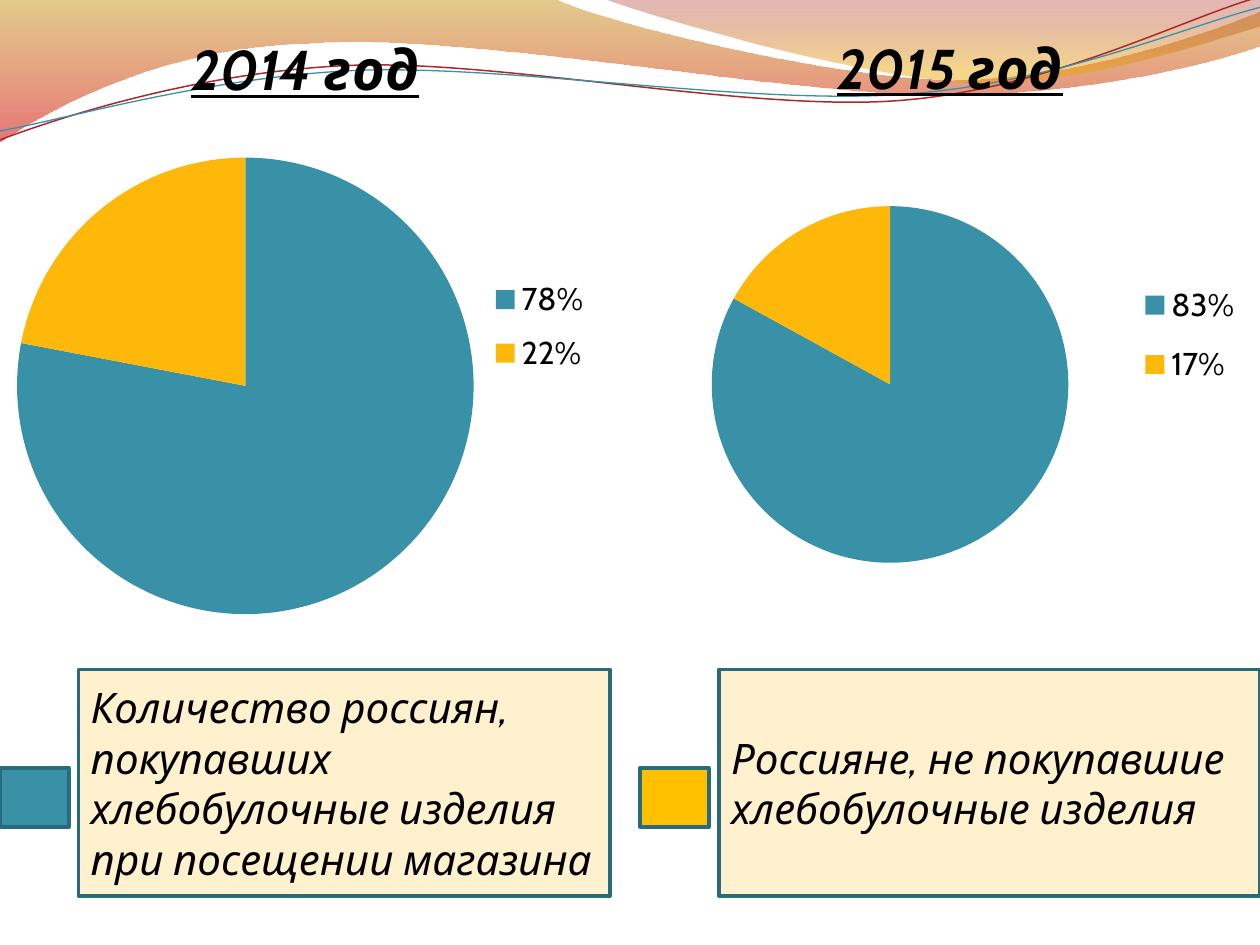
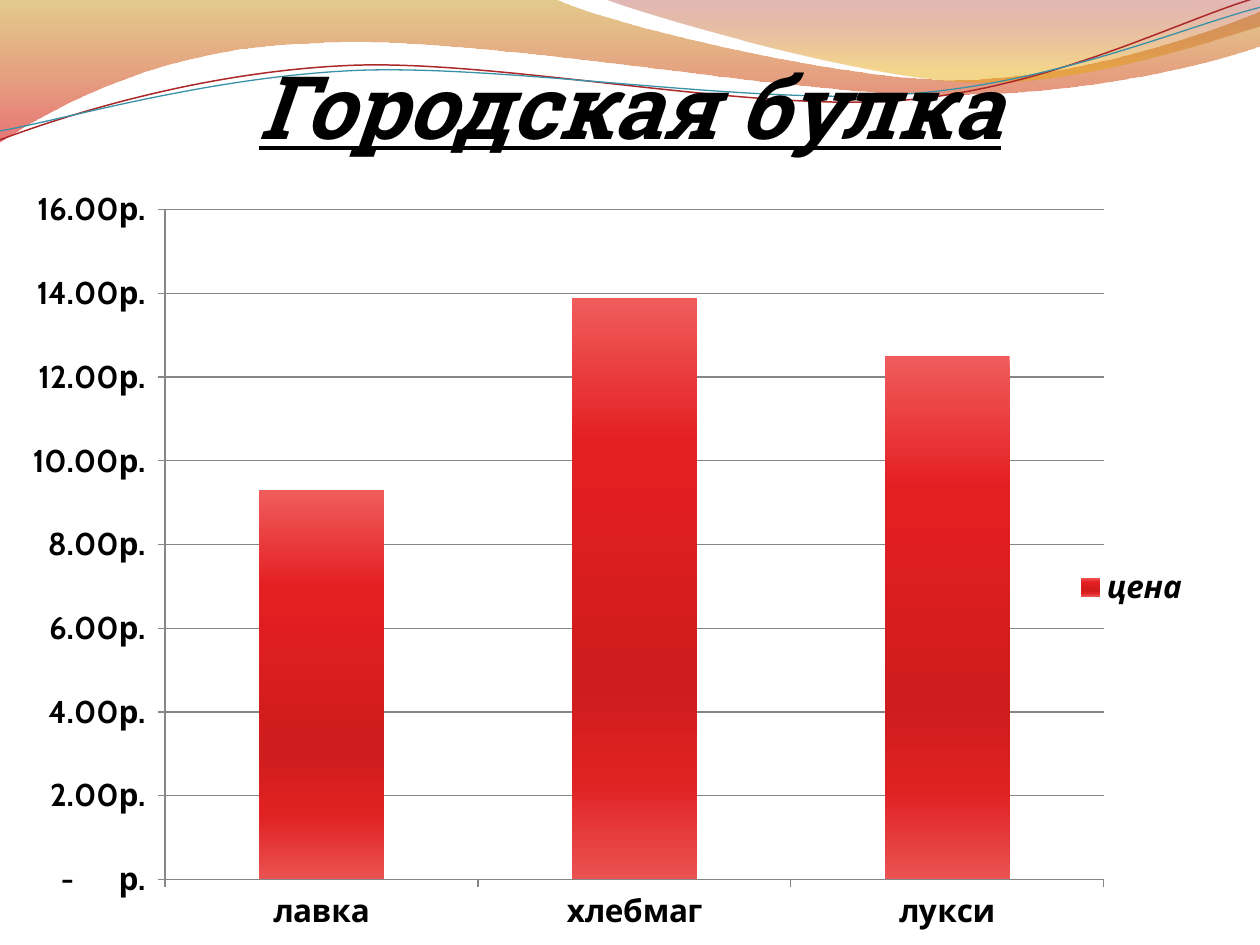
from lxml import etree
from pptx import Presentation
from pptx.chart.data import CategoryChartData
from pptx.dml.color import RGBColor
from pptx.enum.chart import XL_CHART_TYPE, XL_LEGEND_POSITION, XL_TICK_MARK
from pptx.enum.shapes import MSO_SHAPE
from pptx.enum.text import MSO_ANCHOR, PP_ALIGN
from pptx.oxml import parse_xml
from pptx.oxml.ns import nsdecls, qn
from pptx.util import Cm, Pt

BODY_FONT, TITLE_FONT = "Cabin", "Roboto Slab"
BLACK, TEAL, AMBER, RED = "000000", "3891A7", "FEB80A", "AC2829"
SWATCH_AMBER, CREAM, BORDER, GRID = "FFC000", "FFF1CE", "296B7C", "868686"

# Outlines in cm: a start point, then segments of one point (line) or three (Bezier curve)
WIDE_BAND = [(0, 0), [(11.18, -0.03)],
             [(12.09, 0.43), (16.87, 1.6), (19.25, 1.6)],
             [(21.67, 1.6), (24.33, 0.66), (25.4, 0.23)], [(25.43, 0.91)],
             [(24.97, 1.12), (22.1, 1.93), (18.95, 1.91)],
             [(15.8, 1.91), (9.7, 0.71), (6.53, 0.86)],
             [(3.28, 0.91), (1.17, 2.11), (-0.03, 2.87)]]
RIGHT_BAND = [(12.17, -0.03),
              [(12.93, 0.28), (17.32, 1.57), (19.53, 1.65)],
              [(21.74, 1.75), (24.41, 0.81), (25.4, 0.53)], [(25.4, 0)]]
RED_WAVE = [(0, 2.82),
            [(1.22, 2.36), (4.01, 1.45), (7.04, 1.32)],
            [(10.03, 1.19), (15.06, 2.26), (18.11, 2.03)],
            [(21.16, 1.8), (23.83, 0.38), (25.35, -0.05)]]
TEAL_WAVE = [(0, 2.64),
             [(1.19, 2.44), (4.17, 1.55), (7.19, 1.42)],
             [(10.24, 1.3), (15.16, 2.13), (18.21, 1.9)],
             [(21.23, 1.7), (23.9, 0.53), (25.4, 0.15)]]

BAR_STOPS = [(0, "F05C5C"), (25, "E41F22"), (67, "CF1C1C"), (83, "E02122"), (100, "EB5252")]
PRICE_FORMAT = ('_-* #,##0.00[$р.-419]_-;\\-* #,##0.00[$р.-419]_-;'
                '_-* "-"??[$р.-419]_-;_-@_-')


def rgb(color):
    return RGBColor.from_string(color)


def style_font(font, size, name=BODY_FONT, bold=False, italic=False, underline=False):
    font.size, font.name = Pt(size), name
    font.bold, font.italic, font.underline = bold, italic, underline
    font.color.rgb = rgb(BLACK)


def add_outline(s, outline, closed):
    """Build a polygon through all points, then turn its three-point segments into curves."""
    start, *segments = outline
    builder = s.shapes.build_freeform(Cm(start[0]), Cm(start[1]))
    builder.add_line_segments([(Cm(x), Cm(y)) for segment in segments for x, y in segment],
                              close=closed)
    sp = builder.convert_to_shape()
    sp.shadow.inherit = False
    lines = iter(list(sp._element.spPr.iter(qn("a:lnTo"))))
    for segment in segments:
        group = [next(lines) for _ in segment]
        if len(group) == 3:
            curve = etree.Element(qn("a:cubicBezTo"))
            group[0].addprevious(curve)
            for line in group:
                curve.append(line[0])
                line.getparent().remove(line)
    return sp


def add_band(s, outline, stops):
    """Add a closed band; each stop is position, colour and opacity in percent."""
    sp = add_outline(s, outline, True)
    sp.line.fill.background()
    sp.fill.gradient()
    sp.fill.gradient_angle = 270
    for stop, (position, color, _) in zip(sp.fill.gradient_stops, stops):
        stop.position = position / 100
        stop.color.rgb = rgb(color)
    for clr, (_, _, opacity) in zip(sp._element.spPr.iter(qn("a:srgbClr")), stops):
        etree.SubElement(clr, qn("a:alpha"), val=str(opacity * 1000))
    return sp


def add_wave(s, outline, color, width):
    sp = add_outline(s, outline, False)
    sp.fill.background()
    sp.line.color.rgb = rgb(color)
    sp.line.width = Pt(width)
    return sp


def decorate_master(prs, s):
    """Draw the bands on a slide, then move them to the master behind everything."""
    shapes = [
        add_band(s, WIDE_BAND, [(0, "C38B00", 45), (100, "D60305", 55)]),
        add_band(s, RIGHT_BAND, [(0, "A11112", 30), (80, "E9A600", 45)]),
        add_wave(s, RED_WAVE, RED, 0.85),
        add_wave(s, TEAL_WAVE, TEAL, 0.75),
    ]
    tree = prs.slide_master.shapes._spTree
    for i, sp in enumerate(shapes):
        sp._element.nvSpPr.cNvPr.set("id", str(100 + i))
        tree.insert(2 + i, sp._element)


def place(element, index, x, y, w=None, h=None, inner=False):
    """Give a chart part a manual layout, in fractions of the chart."""
    old = element.find(qn("c:layout"))
    if old is not None:
        element.remove(old)
    layout = parse_xml(f'<c:layout {nsdecls("c")}><c:manualLayout/></c:layout>')
    values = [("layoutTarget", "inner")] if inner else []
    values += [("xMode", "edge"), ("yMode", "edge"), ("x", x), ("y", y)]
    if w is not None:
        values += [("w", w), ("h", h)]
    for tag, value in values:
        etree.SubElement(layout[0], qn(f"c:{tag}"), val=str(value))
    element.insert(index, layout)


def add_chart(s, kind, box, name, cats, vals, plot_area, legend_area):
    data = CategoryChartData()
    data.categories = cats
    data.add_series(name, vals)
    chart = s.shapes.add_chart(kind, *map(Cm, box), data).chart
    style_font(chart.font, 18)
    space = chart._chartSpace
    space.find(qn("c:txPr")).addprevious(
        parse_xml(f'<c:spPr {nsdecls("c", "a")}><a:noFill/><a:ln><a:noFill/></a:ln></c:spPr>'))
    place(space.chart.plotArea, 0, *plot_area, inner=True)
    chart.has_legend = True
    chart.legend.position = XL_LEGEND_POSITION.RIGHT
    chart.legend.include_in_layout = False
    place(chart.legend._element, 1, *legend_area)
    return chart


def add_year_pie(s, box, title, vals, title_at, plot_area, legend_area):
    chart = add_chart(s, XL_CHART_TYPE.PIE, box, title, [f"{v}%" for v in vals], vals,
                      plot_area, legend_area)
    chart.has_title = True
    r = chart.chart_title.text_frame.paragraphs[0].add_run()
    r.text = title
    style_font(r.font, 32, bold=True, italic=True, underline=True)
    place(chart.chart_title._element, 1, *title_at)
    plot = chart.plots[0]
    plot.vary_by_categories = True
    for i, color in enumerate((TEAL, AMBER)):
        fill = plot.series[0].points[i].format.fill
        fill.solid()
        fill.fore_color.rgb = rgb(color)


def add_price_columns(s, box, name, cats, vals):
    chart = add_chart(s, XL_CHART_TYPE.COLUMN_CLUSTERED, box, name, cats, vals,
                      (0.131, 0.045, 0.745, 0.87), (0.848, 0.5, 0.1, 0.07))
    chart.has_title = False
    style_font(chart.legend.font, 18, bold=True, italic=True)
    plot = chart.plots[0]
    plot.vary_by_categories = False
    plot.gap_width = 150
    stops = "".join(f'<a:gs pos="{pos * 1000}"><a:srgbClr val="{color}"/></a:gs>'
                    for pos, color in BAR_STOPS)
    plot.series[0].format.fill.gradient()
    grad = next(plot.series[0]._element.iter(qn("a:gradFill")))
    grad.getparent().replace(grad, parse_xml(
        f'<a:gradFill {nsdecls("a")}><a:gsLst>{stops}</a:gsLst><a:lin ang="5400000"/></a:gradFill>'))
    prices = chart.value_axis
    prices.minimum_scale, prices.maximum_scale, prices.major_unit = 0, 16, 2
    prices.tick_labels.number_format = PRICE_FORMAT
    prices.tick_labels.number_format_is_linked = False
    prices.has_major_gridlines = True
    prices.major_gridlines.format.line.color.rgb = rgb(GRID)
    for axis in (prices, chart.category_axis):
        style_font(axis.tick_labels.font, 18, bold=True)
        axis.major_tick_mark = XL_TICK_MARK.OUTSIDE
        axis.format.line.color.rgb = rgb(GRID)


def add_box(s, box, fill, text=None):
    sp = s.shapes.add_shape(MSO_SHAPE.RECTANGLE, *map(Cm, box))
    sp.shadow.inherit = False
    sp.fill.solid()
    sp.fill.fore_color.rgb = rgb(fill)
    sp.line.color.rgb = rgb(BORDER)
    sp.line.width = Pt(2)
    if text:
        tf = sp.text_frame
        tf.word_wrap = True
        tf.vertical_anchor = MSO_ANCHOR.MIDDLE
        p = tf.paragraphs[0]
        p.alignment = PP_ALIGN.LEFT
        r = p.add_run()
        r.text = text
        style_font(r.font, 24, italic=True)


def add_key(s, left, text_left, text_width, color, text):
    """Add a colour swatch with its explanation beside it."""
    add_box(s, (text_left, 13.5, text_width, 4.56), CREAM, text)
    add_box(s, (left, 15.48, 1.39, 1.19), color)


def set_title(s, text):
    sp = s.shapes.title
    sp.left, sp.top, sp.width, sp.height = Cm(0), Cm(0), Cm(25.4), Cm(3.17)
    tf = sp.text_frame
    tf.margin_left = tf.margin_right = tf.margin_bottom = 0
    tf.margin_top = Cm(0.13)
    tf.vertical_anchor = MSO_ANCHOR.BOTTOM
    p = tf.paragraphs[0]
    p.alignment = PP_ALIGN.CENTER
    r = p.add_run()
    r.text = text
    style_font(r.font, 50, TITLE_FONT, bold=True, italic=True, underline=True)


def main():
    prs = Presentation()
    prs.slide_width, prs.slide_height = Cm(25.4), Cm(19.05)
    title_only, blank = prs.slide_layouts[5], prs.slide_layouts[6]

    s = prs.slides.add_slide(blank)
    decorate_master(prs, s)
    add_year_pie(s, (0, 0, 12.29, 13.11), "2014 год", (78, 22), (0.297, 0.031),
                 (0.028, 0.242, 0.749, 0.703), (0.8, 0.408, 0.17, 0.188))
    add_year_pie(s, (12.9, 0, 12.5, 11.71), "2015 год", (83, 17), (0.302, 0.032),
                 (0.115, 0.355, 0.577, 0.614), (0.797, 0.456, 0.18, 0.241))
    add_key(s, 0, 1.58, 10.72, TEAL,
            "Количество россиян, покупавших хлебобулочные изделия при посещении магазина")
    add_key(s, 12.9, 14.49, 10.91, SWATCH_AMBER,
            "Россияне, не покупавшие хлебобулочные изделия")

    s = prs.slides.add_slide(title_only)
    set_title(s, "Городская булка")
    add_price_columns(s, (0, 3.53, 25.4, 15.52), "цена",
                      ("лавка", "хлебмаг", "лукси"), (9.3, 13.9, 12.5))

    prs.save("out.pptx")


if __name__ == "__main__":
    main()
